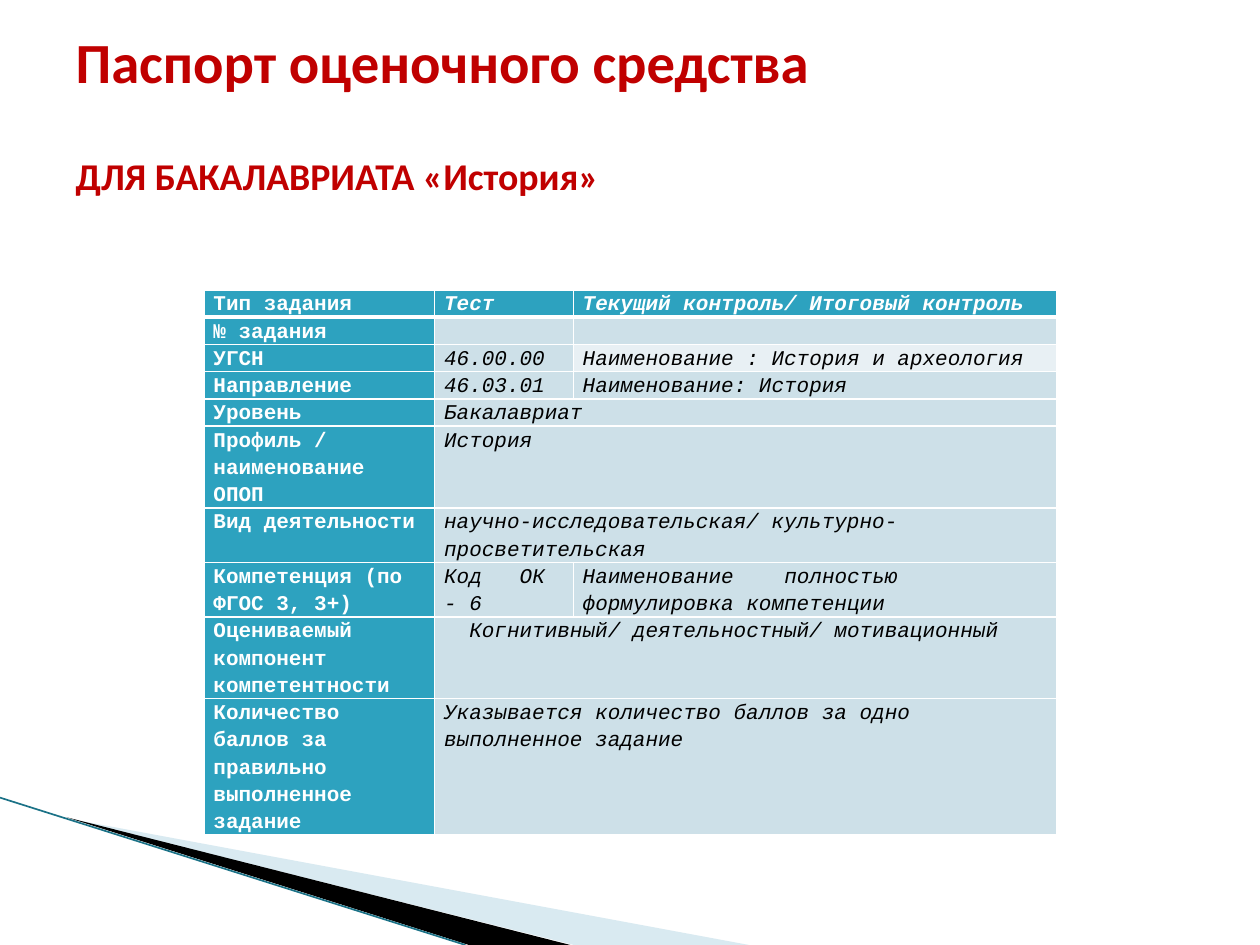
from lxml.etree import SubElement
from pptx import Presentation
from pptx.dml.color import RGBColor
from pptx.enum.shapes import MSO_CONNECTOR
from pptx.enum.text import MSO_ANCHOR, PP_ALIGN
from pptx.oxml.ns import qn
from pptx.util import Pt

COLORS = {
    "title": "C00000", "header": "2DA2BF", "band": "CDE0E8", "light": "E8F0F4",
    "white": "FFFFFF", "black": "000000", "wedge": "A0CBDC", "edge": "1B7287",
}
ROWS = [
    (1, "Тип задания", "Тест", "Текущий контроль/ Итоговый контроль"),
    (1, "№ задания", "", ""),
    (1, "УГСН", "46.00.00", "Наименование : История и археология"),
    (1, "Направление", "46.03.01", "Наименование: История"),
    (1, "Уровень", "Бакалавриат"),
    (3, "Профиль / наименование ОПОП", "История"),
    (2, "Вид деятельности", "научно-исследовательская/ культурно-просветительская"),
    (2, "Компетенция (по ФГОС 3, 3+)", "Код\tОК - 6",
     "Наименование\tполностью формулировка компетенции"),
    (3, "Оцениваемый компонент компетентности",
     "Когнитивный/ деятельностный/ мотивационный"),
    (5, "Количество баллов за правильно выполненное задание",
     "Указывается количество баллов за одно выполненное задание"),
]
COLUMN_WIDTHS = (131.8, 79.2, 276.5)
LINE_HEIGHT = 15.5
CHARACTER_WIDTH = 7.2
INDENTED_ROW = 8
LIGHT_CELL = (2, 2)


class PassportSlide:
    title_font = "Calibri"
    table_font = "Courier New"

    def __init__(self, presentation):
        self.slide = presentation.slides.add_slide(presentation.slide_layouts[5])

    def color(self, name):
        return RGBColor.from_string(COLORS[name])

    def title(self, heading, subtitle, left, top, width, height):
        shape = self.slide.shapes.title
        shape.left, shape.top, shape.width, shape.height = map(
            Pt, (left, top, width, height))
        frame = shape.text_frame
        frame.word_wrap = True
        frame.vertical_anchor = MSO_ANCHOR.MIDDLE
        paragraph = frame.paragraphs[0]
        paragraph.alignment = PP_ALIGN.LEFT
        paragraph.line_spacing = 0.9
        paragraph.font.name = self.title_font
        paragraph.font.size = Pt(32.4)
        paragraph.font.bold = True
        paragraph.font.color.rgb = self.color("title")
        paragraph.add_run().text = heading
        paragraph.add_line_break()
        paragraph.add_line_break()
        run = paragraph.add_run()
        run.text = subtitle
        run.font.size = Pt(21.6)

    def wedge(self, points, color, opacity=100):
        builder = self.slide.shapes.build_freeform(*points[0], scale=Pt(1))
        builder.add_line_segments(points[1:], close=True)
        shape = builder.convert_to_shape()
        shape.shadow.inherit = False
        shape.fill.solid()
        shape.fill.fore_color.rgb = self.color(color)
        shape.line.fill.background()
        if opacity < 100:
            fill_color = shape.fill._xPr.find(".//" + qn("a:srgbClr"))
            SubElement(fill_color, qn("a:alpha"), val=str(opacity * 1000))

    def line(self, start, end, color, width):
        connector = self.slide.shapes.add_connector(
            MSO_CONNECTOR.STRAIGHT, *map(Pt, start + end))
        connector.line.color.rgb = self.color(color)
        connector.line.width = Pt(width)
        SubElement(connector._element.spPr, qn("a:effectLst"))

    def borders(self, cell, bottom):
        properties = cell._tc.get_or_add_tcPr()
        widths = {"a:lnL": 1, "a:lnR": 1, "a:lnT": 1, "a:lnB": bottom}
        for position, (tag, width) in enumerate(widths.items()):
            border = SubElement(properties, qn(tag), w=str(Pt(width)))
            fill = SubElement(border, qn("a:solidFill"))
            SubElement(fill, qn("a:srgbClr"), val=COLORS["white"])
            properties.insert(position, border)

    def cell(self, cell, text, fill, bold, italic, indent=0):
        cell.margin_left = cell.margin_right = Pt(5.4)
        cell.margin_top = cell.margin_bottom = 0
        cell.fill.solid()
        cell.fill.fore_color.rgb = self.color(fill)
        paragraph = cell.text_frame.paragraphs[0]
        paragraph.text = text
        paragraph.line_spacing = 1.15
        properties = paragraph._p.get_or_add_pPr()
        if indent:
            properties.set("marL", str(Pt(indent)))
        if "\t" in text:
            characters = text.index("\t") + (3 if text.index("\t") == 3 else 4)
            stops = SubElement(properties, qn("a:tabLst"))
            SubElement(stops, qn("a:tab"), algn="l",
                       pos=str(Pt(characters * CHARACTER_WIDTH)))
        paragraph.font.name = self.table_font
        paragraph.font.size = Pt(12)
        paragraph.font.bold = bold
        paragraph.font.italic = italic
        paragraph.font.color.rgb = self.color("white" if bold else "black")

    def table(self, rows, left, top):
        height = LINE_HEIGHT * sum(row[0] for row in rows)
        table = self.slide.shapes.add_table(
            len(rows), len(COLUMN_WIDTHS), Pt(left), Pt(top),
            Pt(sum(COLUMN_WIDTHS)), Pt(height)).table
        for column, width in zip(table.columns, COLUMN_WIDTHS):
            column.width = Pt(width)
        for row_index, (lines, *texts) in enumerate(rows):
            table.rows[row_index].height = Pt(lines * LINE_HEIGHT)
            if len(texts) == 2:
                table.cell(row_index, 1).merge(table.cell(row_index, 2))
                texts.append("")
            for column_index, text in enumerate(texts):
                cell = table.cell(row_index, column_index)
                heading = row_index == 0 or column_index == 0
                fill = "header" if heading else "band"
                if (row_index, column_index) == LIGHT_CELL:
                    fill = "light"
                indented = row_index == INDENTED_ROW and column_index == 1
                self.cell(cell, text, fill, heading, column_index > 0,
                          2 * CHARACTER_WIDTH if indented else 0)
                self.borders(cell, 3 if row_index == 0 else 1)


def main():
    presentation = Presentation()
    presentation.slide_width, presentation.slide_height = Pt(720), Pt(540)
    page = PassportSlide(presentation)
    page.wedge([(39.6, 468.4), (428.4, 540), (328.3, 540)], "wedge", 40)
    page.wedge([(38.2, 467.3), (326, 540), (267.8, 540)], "black")
    page.line((0, 455.8), (266, 540), "edge", 0.95)
    page.table(ROWS, 116.6, 165.6)
    page.title("Паспорт оценочного средства", "ДЛЯ БАКАЛАВРИАТА «История»",
               36, 21.6, 648, 90)
    presentation.save("out.pptx")


if __name__ == "__main__":
    main()
